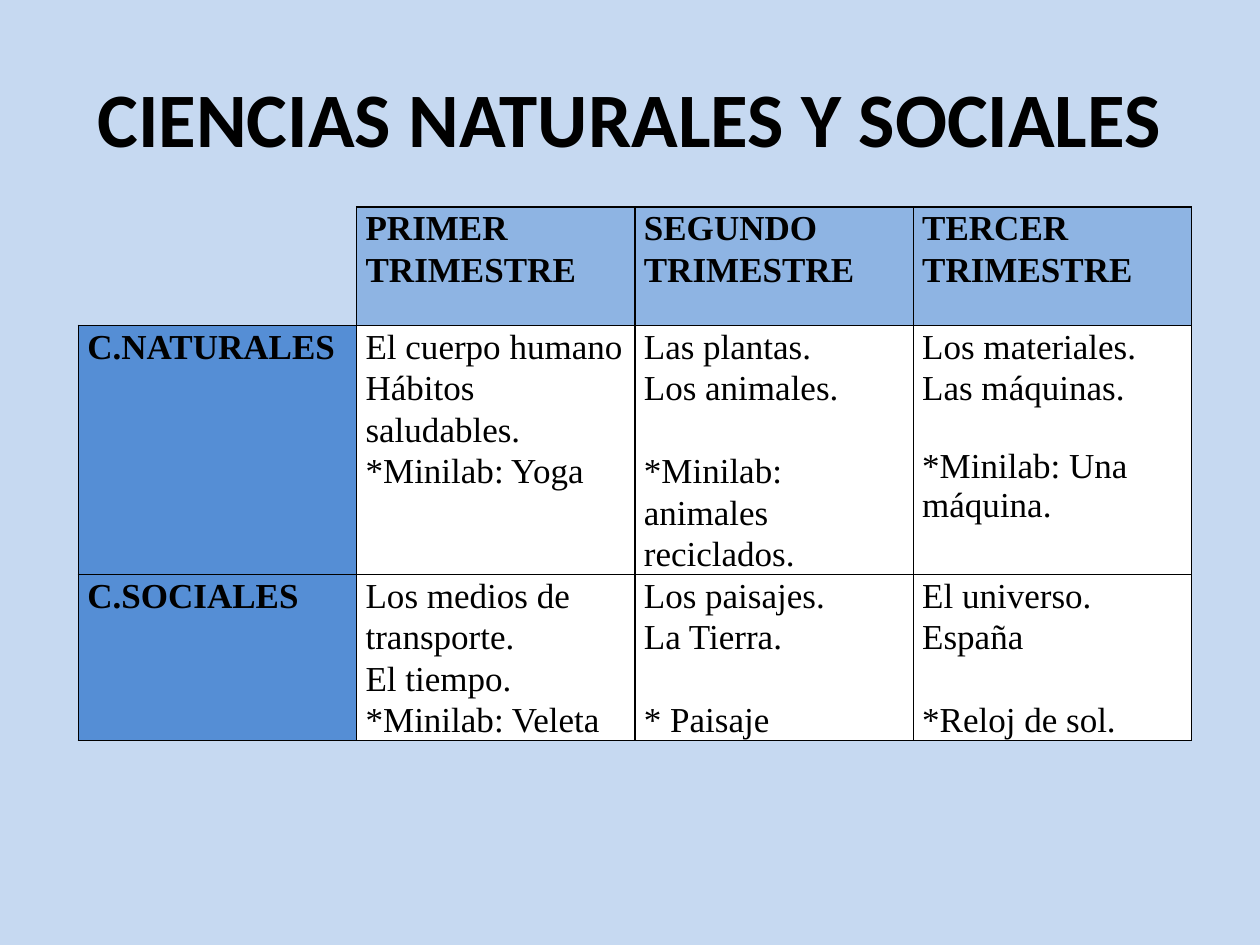
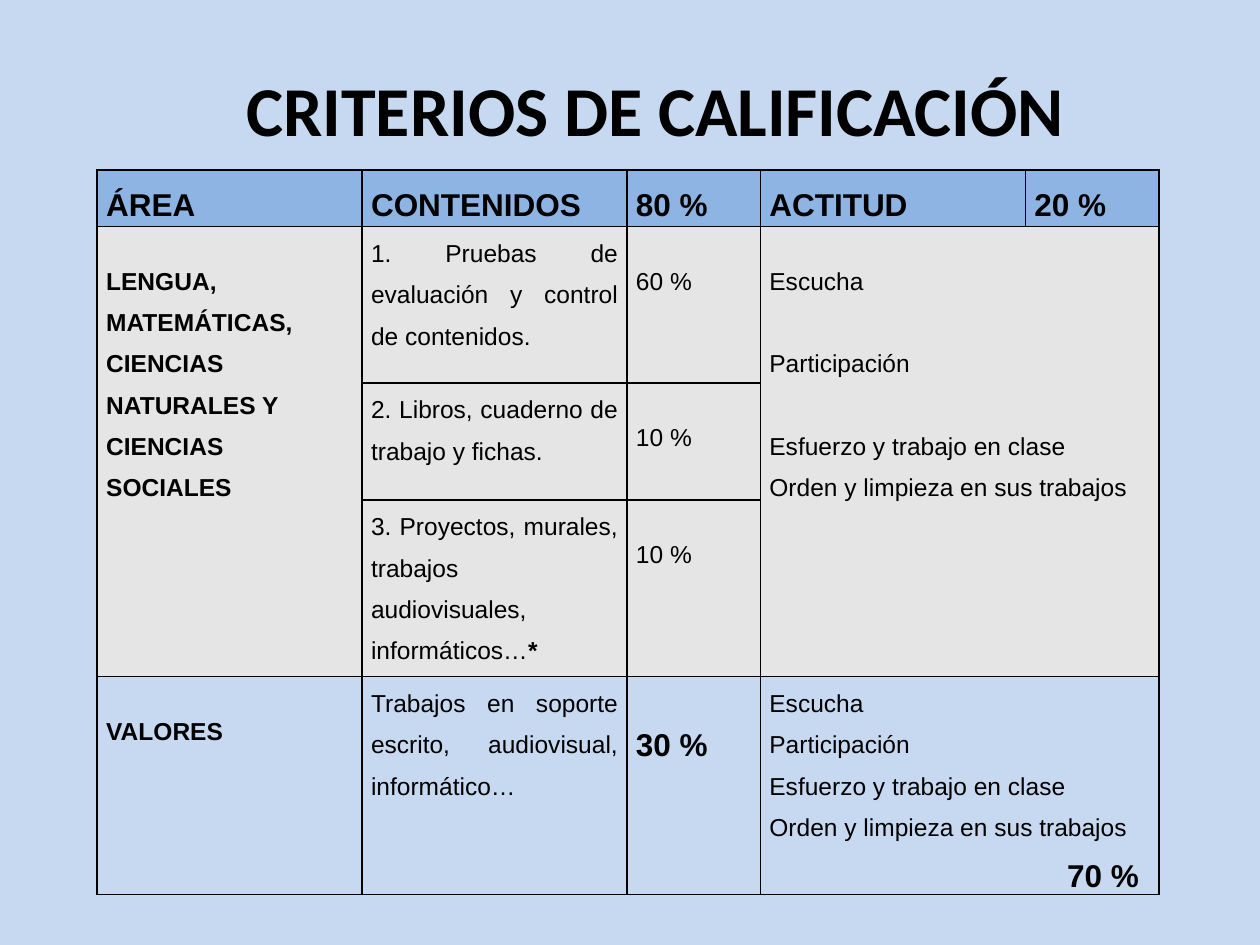
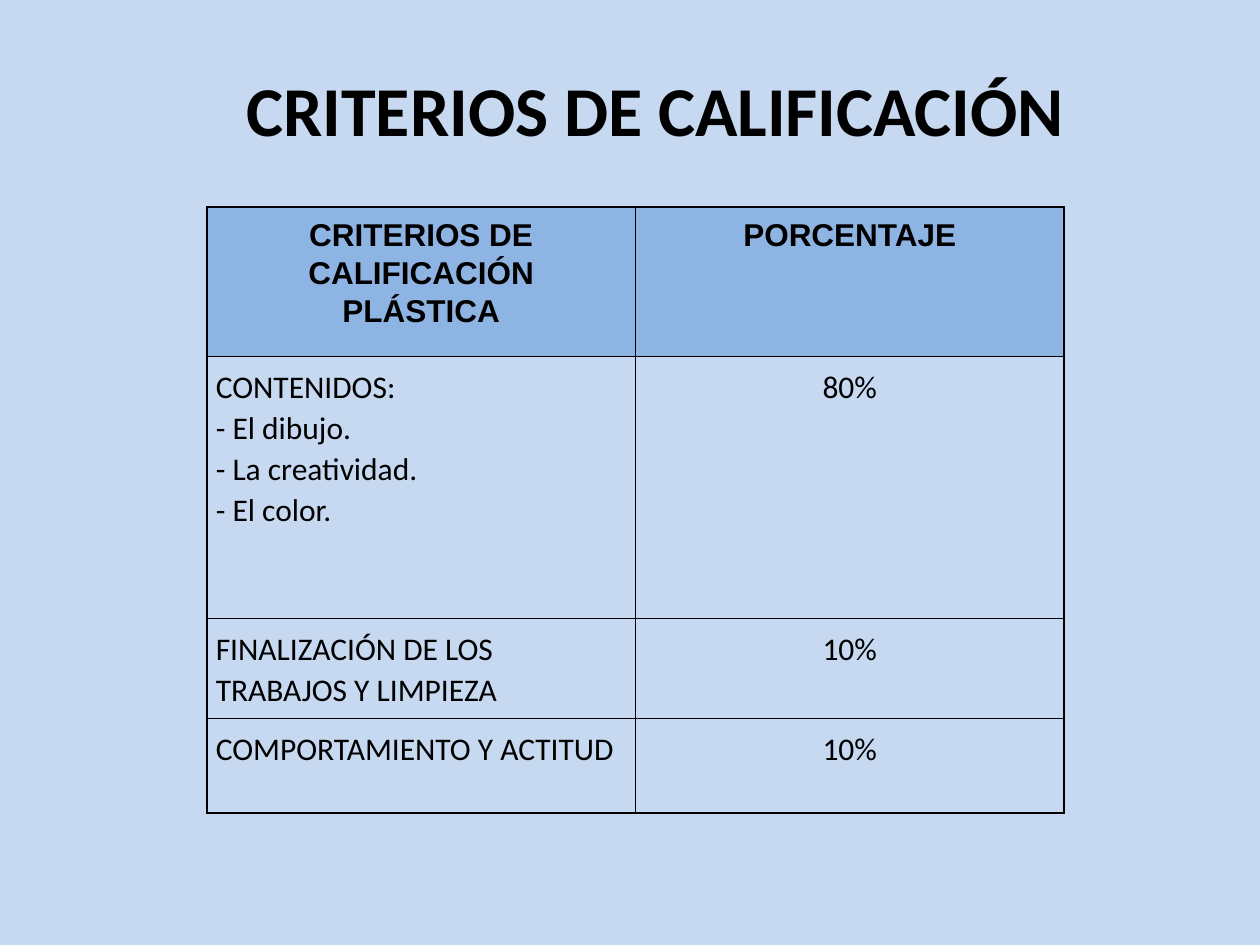
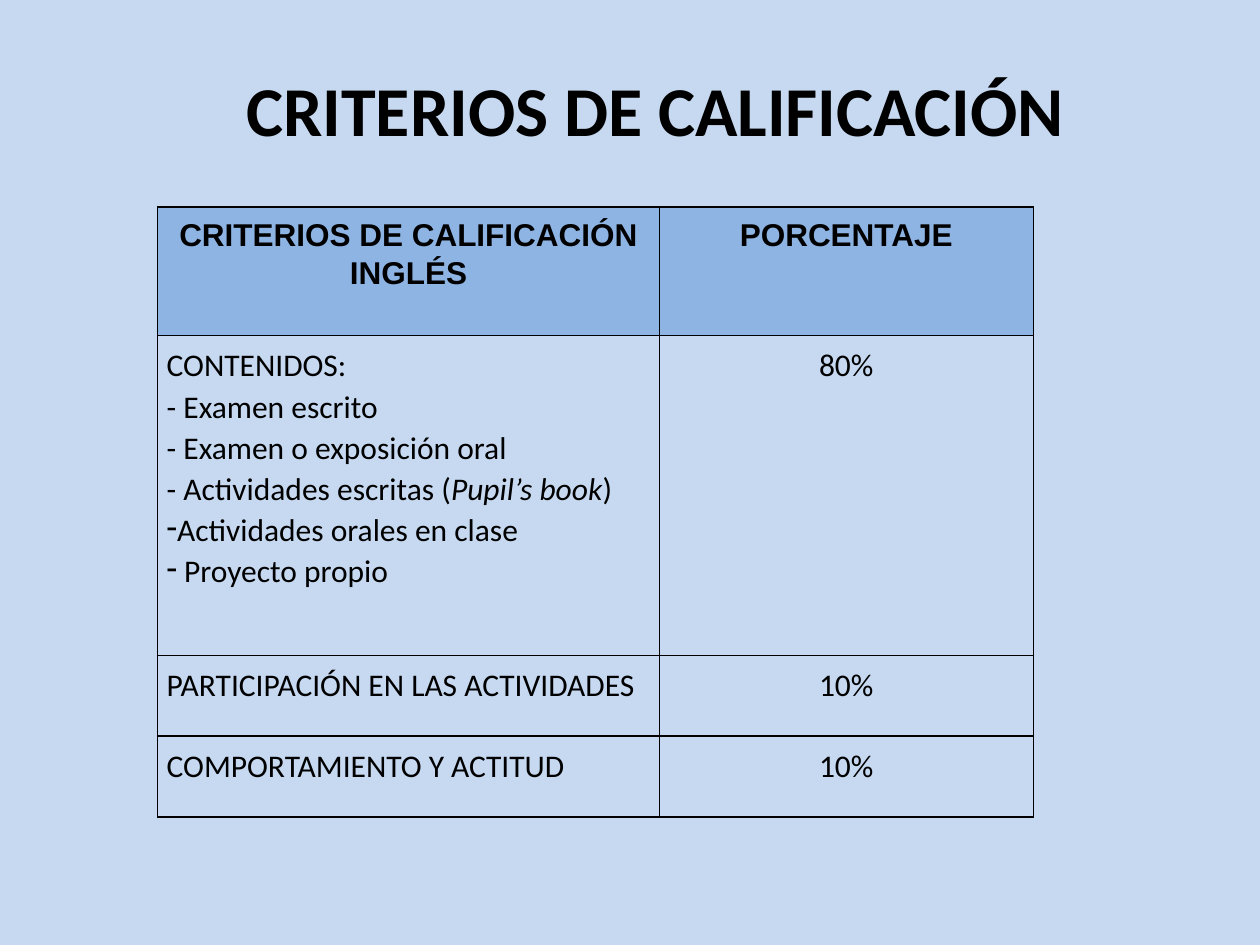
from lxml import etree
from pptx import Presentation
from pptx.dml.color import RGBColor
from pptx.enum.text import MSO_ANCHOR, MSO_AUTO_SIZE, PP_ALIGN as AL
from pptx.oxml.ns import qn
from pptx.util import Cm, Pt

BACK = RGBColor(0xC6, 0xD9, 0xF1)
HEAD = RGBColor(0x8E, 0xB4, 0xE3)
SIDE = RGBColor(0x55, 0x8E, 0xD5)
GREY = RGBColor(0xE5, 0xE5, 0xE5)
WHITE = RGBColor(0xFF, 0xFF, 0xFF)
BLACK = RGBColor(0, 0, 0)
PLAIN_STYLE = "{2D5ABB26-0587-4C30-8999-92F81FD0307C}"
GRADING = "CRITERIOS DE CALIFICACIÓN"
GRADING_BOX = (1.78, 1.57, 22.86, 1.22)

prs = Presentation()
prs.slide_width, prs.slide_height = Cm(25.4), Cm(19.05)
bg = prs.slide_master.background.fill
bg.solid()
bg.fore_color.rgb = BACK


def add_table_slide(title, size, box, left, top, widths, heights):
    s = prs.slides.add_slide(prs.slide_layouts[5])
    sp = s.shapes.title
    sp.left, sp.top, sp.width, sp.height = [Cm(v) for v in box]
    tf = sp.text_frame
    tf.text = title
    tf.auto_size = MSO_AUTO_SIZE.NONE
    tf.vertical_anchor = MSO_ANCHOR.MIDDLE
    p = tf.paragraphs[0]
    p.alignment = AL.CENTER
    p.font.name, p.font.size, p.font.bold = "Calibri", Pt(size), True
    p.font.color.rgb = BLACK
    table = s.shapes.add_table(len(heights), len(widths), Cm(left), Cm(top),
                               Cm(sum(widths)), Cm(sum(heights))).table
    table.first_row = table.horz_banding = False
    table._tbl.tblPr.find(qn("a:tableStyleId")).text = PLAIN_STYLE
    for col, width in zip(table.columns, widths):
        col.width = Cm(width)
    for row, height in zip(table.rows, heights):
        row.height = Cm(height)
    return table


def write_cell(cell, lines, font, size, bold, align, spacing, fill=None, inset=0):
    tcPr = cell._tc.get_or_add_tcPr()
    for side in ("a:lnL", "a:lnR", "a:lnT", "a:lnB"):
        ln = etree.SubElement(tcPr, qn(side), w=str(Pt(1)))
        color = etree.SubElement(ln, qn("a:solidFill"))
        etree.SubElement(color, qn("a:srgbClr"), val=str(BLACK))
    if fill is None:
        cell.fill.background()
    else:
        cell.fill.solid()
        cell.fill.fore_color.rgb = fill
    cell.margin_left = cell.margin_right = Cm(0.18)
    cell.margin_top = cell.margin_bottom = Cm(inset)
    cell.text = "\n".join(lines)
    for p in cell.text_frame.paragraphs:
        p.alignment, p.line_spacing = align, spacing
        p.font.name, p.font.size, p.font.bold = font, Pt(size), bold
        p.font.color.rgb = BLACK


table = add_table_slide("CIENCIAS NATURALES Y SOCIALES", 44, (1.27, 0.76, 22.86, 3.18),
                        1.58, 4.17, [5.61] * 4, [2.39, 5.02, 3.35])
terms = [
    [None, ["PRIMER TRIMESTRE"], ["SEGUNDO TRIMESTRE"], ["TERCER TRIMESTRE"]],
    [["C.NATURALES"],
     ["El cuerpo humano", "Hábitos saludables.", "*Minilab: Yoga"],
     ["Las plantas.", "Los animales.", "*Minilab: animales reciclados."],
     ["Los materiales.", "Las máquinas.", "*Minilab: Una máquina."]],
    [["C.SOCIALES"],
     ["Los medios de transporte.", "El tiempo.", "*Minilab: Veleta"],
     ["Los paisajes.", "La Tierra.", "* Paisaje"],
     ["El universo.", "España", "*Reloj de sol."]],
]
for i, row in enumerate(terms):
    for j, lines in enumerate(row):
        if lines:
            fill = HEAD if i == 0 else SIDE if j == 0 else WHITE
            write_cell(table.cell(i, j), lines, "Times New Roman", 20,
                       i == 0 or j == 0, AL.LEFT, 1.07, fill)
            if i > 0 and j > 1:
                table.cell(i, j).text_frame.paragraphs[2].space_before = Pt(23.5)
p = table.cell(1, 3).text_frame.paragraphs[2]
p.line_spacing, p.space_before = 1.0, Pt(22)

table = add_table_slide(GRADING, 40, GRADING_BOX, 1.96, 3.43,
                        [5.34, 5.34, 2.69, 5.34, 2.69], [1.14, 3.15, 2.36, 3.56, 4.38])
attitude = ["Escucha", "Participación", "Esfuerzo y trabajo en clase",
            "Orden y limpieza en sus trabajos"]
areas = [
    [["ÁREA"], ["CONTENIDOS"], ["80 %"], ["ACTITUD"], ["20 %"]],
    [["LENGUA,", "MATEMÁTICAS,", "CIENCIAS NATURALES Y", "CIENCIAS SOCIALES"],
     ["1. Pruebas de evaluación y control de contenidos."], ["60 %"], attitude, []],
    [[], ["2. Libros, cuaderno de trabajo y fichas."], ["10 %"], [], []],
    [[], ["3. Proyectos, murales, trabajos audiovisuales, informáticos…"], ["10 %"], [], []],
    [["VALORES"], ["Trabajos en soporte escrito, audiovisual, informático…"], ["30 %"],
     attitude + ["70 %"], []],
]
for i, row in enumerate(areas):
    for j, lines in enumerate(row):
        big = i == 0 or (i, j) == (4, 2)
        fill = HEAD if i == 0 else GREY if i < 4 else None
        cell = table.cell(i, j)
        write_cell(cell, lines, "Arial", 18 if big else 14, big or j == 0,
                   AL.JUSTIFY, 1.5, fill)
        if i > 0 and (j in (0, 2) or (i, j) == (1, 3)):
            cell.margin_top = Cm(0.69 if big else 0.56)
table.cell(1, 0).merge(table.cell(3, 0))
table.cell(1, 3).merge(table.cell(3, 4))
table.cell(4, 3).merge(table.cell(4, 4))
for p in table.cell(1, 3).text_frame.paragraphs[1:3]:
    p.space_before = Pt(23.5)
r = table.cell(3, 1).text_frame.paragraphs[0].add_run()
r.text, r.font.bold = "*", True
table.cell(4, 3).margin_right = Cm(0.4)
p = table.cell(4, 3).text_frame.paragraphs[-1]
p.alignment, p.font.size, p.font.bold = AL.RIGHT, Pt(18), True

subjects = [
    ("PLÁSTICA", 4.17, [8.64, 8.64], [3.02, 5.28, 2.01, 1.9],
     ["- El dibujo.", "- La creatividad.", "- El color."],
     "FINALIZACIÓN DE LOS TRABAJOS Y LIMPIEZA"),
    ("INGLÉS", 3.18, [10.11, 7.54], [2.59, 6.45, 1.63, 1.63],
     ["- Examen escrito", "- Examen o exposición oral", "- Actividades escritas (",
      "Actividades orales en clase", " Proyecto propio"],
     "PARTICIPACIÓN EN LAS ACTIVIDADES"),
]
for subject, left, widths, heights, contents, work in subjects:
    table = add_table_slide(GRADING, 40, GRADING_BOX, left, 4.17, widths, heights)
    rows = [
        ([GRADING, subject], "PORCENTAJE"),
        (["CONTENIDOS:"] + contents, "80%"),
        ([work], "10%"),
        (["COMPORTAMIENTO Y ACTITUD"], "10%"),
    ]
    for i, (lines, share) in enumerate(rows):
        head = i == 0
        for j, text in enumerate((lines, [share])):
            write_cell(table.cell(i, j), text, "Arial" if head else "Calibri", 18, head,
                       AL.CENTER if head or j else AL.LEFT, 1.07,
                       HEAD if head else None, 0.18)

paragraphs = table.cell(1, 0).text_frame.paragraphs
for text, italic in (("Pupil’s book", True), (")", False)):
    r = paragraphs[3].add_run()
    r.text, r.font.italic = text, italic
for p in paragraphs[4:]:
    pPr = p._p.get_or_add_pPr()
    pPr.set("marL", "0")
    pPr.set("indent", str(-Cm(0.3)))
    bullet = etree.Element(qn("a:buChar"), char="-")
    pPr.find(qn("a:defRPr")).addprevious(bullet)

prs.save("out.pptx")
